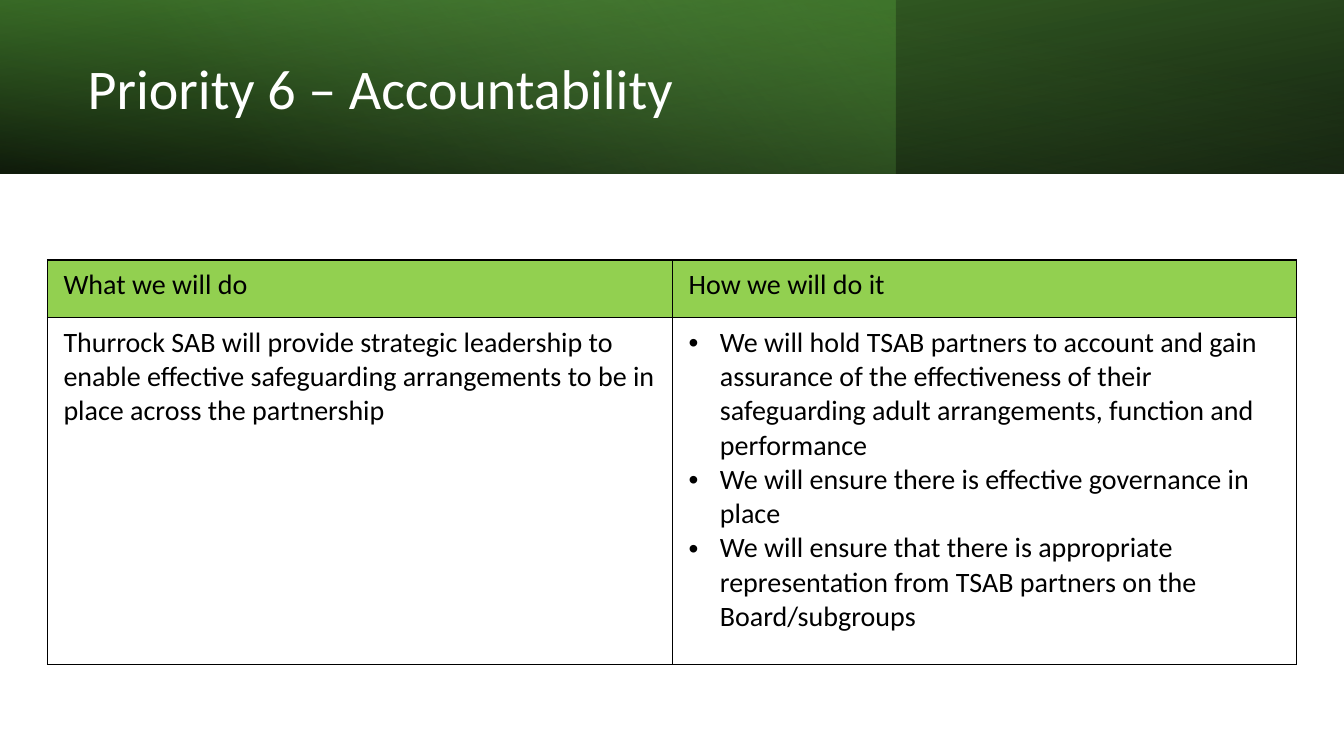
"""Build the Priority 6 accountability slide: a gradient banner over a two-column table."""
from lxml.etree import SubElement
from pptx import Presentation
from pptx.dml.color import RGBColor
from pptx.enum.shapes import MSO_SHAPE
from pptx.enum.text import MSO_ANCHOR, PP_ALIGN
from pptx.oxml.ns import qn
from pptx.util import Inches, Pt

TITLE = "Priority 6 – Accountability"
HEADINGS = ["What we will do", "How we will do it"]
AIM = ["Thurrock SAB will provide strategic leadership to enable effective safeguarding "
       "arrangements to be in place across the partnership"]
ACTIONS = [
    "We will hold TSAB partners to account and gain assurance of the effectiveness of their "
    "safeguarding adult arrangements, function and performance",
    "We will ensure there is effective governance in place",
    "We will ensure that there is appropriate representation from TSAB partners on the "
    "Board/subgroups",
]
COLORS = {"black": "000000", "white": "FFFFFF", "forest": "3F762B", "green": "549E39",
          "pale": "93D07D", "heading": "92D050"}
FONT = "Calibri"
WIDTH, HEIGHT, BANNER_HEIGHT = 13.33, 7.5, 1.72
BANNER = [
    {"share": 1, "angle": 100, "rotation": 180, "flip": True,
     "stops": [(0, "black", 96), (100, "forest", 100)]},
    {"share": 2 / 3, "angle": 140, "rotation": 0, "flip": False,
     "stops": [(0, "green", 41), (74, "pale", 0)]},
    {"share": 1, "angle": 260, "rotation": 0, "flip": True,
     "stops": [(0, "black", 63), (78, "green", 15)]},
]
TITLE_BOX = (0.77, 0.27, 7.72, 1.27)
TABLE_BOX = (0.47, 2.58, 12.39, 4.01)
COLUMN_WIDTHS = [6.2, 6.19]
ROW_HEIGHTS = [0.57, 3.44]
INDENT = 0.31


def write_text(frame, lines, size=20, color="black", bullet=None, spacing=None):
    """Fill a text frame with one paragraph per line."""
    for index, line in enumerate(lines):
        para = frame.paragraphs[0] if index == 0 else frame.add_paragraph()
        para.alignment = PP_ALIGN.LEFT
        if spacing:
            para.line_spacing = spacing
        if bullet:
            properties = para._p.get_or_add_pPr()
            properties.set("marL", str(Inches(INDENT)))
            properties.set("indent", str(-Inches(INDENT)))
            SubElement(properties, qn("a:buFont"), typeface="Arial")
            SubElement(properties, qn("a:buChar"), char=bullet)
        span = para.add_run()
        span.text = line
        span.font.size = Pt(size)
        span.font.name = FONT
        span.font.color.rgb = RGBColor.from_string(COLORS[color])


def add_banner_layer(page, share, angle, rotation, flip, stops):
    """Add one gradient rectangle across a share of the slide's width."""
    layer = page.shapes.add_shape(MSO_SHAPE.RECTANGLE, 0, 0, Inches(WIDTH * share),
                                  Inches(BANNER_HEIGHT))
    layer.shadow.inherit = False
    layer.line.fill.background()
    layer.rotation = rotation
    if flip:
        layer._element.spPr.find(qn("a:xfrm")).set("flipH", "1")
    layer.fill.gradient()
    gradient = layer._element.spPr.find(qn("a:gradFill"))
    gradient.set("rotWithShape", "1")
    for child in list(gradient):
        gradient.remove(child)
    stop_list = SubElement(gradient, qn("a:gsLst"))
    for position, color, opacity in stops:
        stop = SubElement(stop_list, qn("a:gs"), pos=str(position * 1000))
        tint = SubElement(stop, qn("a:srgbClr"), val=COLORS[color])
        SubElement(tint, qn("a:alpha"), val=str(opacity * 1000))
    SubElement(gradient, qn("a:lin"), ang=str(angle * 60000), scaled="0")


def format_cell(cell, fill=None):
    """Set a cell's margins, borders and fill."""
    cell.margin_left = cell.margin_right = Inches(0.16)
    cell.margin_top = cell.margin_bottom = Inches(0.08)
    properties = cell._tc.get_or_add_tcPr()
    for side in ("lnL", "lnR", "lnT", "lnB"):
        border = SubElement(properties, qn(f"a:{side}"), w=str(Pt(1)))
        SubElement(SubElement(border, qn("a:solidFill")), qn("a:srgbClr"), val=COLORS["black"])
    if fill:
        cell.fill.solid()
        cell.fill.fore_color.rgb = RGBColor.from_string(COLORS[fill])
    else:
        cell.fill.background()


def add_priority_table(page):
    """Add the table of aims and actions."""
    table = page.shapes.add_table(2, 2, *map(Inches, TABLE_BOX)).table
    table.first_row = True
    table.horz_banding = False
    for column, width in zip(table.columns, COLUMN_WIDTHS):
        column.width = Inches(width)
    for row, height in zip(table.rows, ROW_HEIGHTS):
        row.height = Inches(height)
    for index, heading in enumerate(HEADINGS):
        write_text(table.cell(0, index).text_frame, [heading])
        format_cell(table.cell(0, index), fill="heading")
    for index, (lines, bullet) in enumerate([(AIM, None), (ACTIONS, "•")]):
        write_text(table.cell(1, index).text_frame, lines, bullet=bullet)
        format_cell(table.cell(1, index))


def main():
    """Assemble and save the deck."""
    deck = Presentation()
    deck.slide_width, deck.slide_height = Inches(WIDTH), Inches(HEIGHT)
    page = deck.slides.add_slide(deck.slide_layouts[5])
    for layer in BANNER:
        add_banner_layer(page, **layer)
    title = page.shapes.title
    title.left, title.top, title.width, title.height = map(Inches, TITLE_BOX)
    title.text_frame.vertical_anchor = MSO_ANCHOR.MIDDLE
    title.text_frame.word_wrap = True
    write_text(title.text_frame, [TITLE], size=40, color="white", spacing=0.9)
    page.shapes._spTree.append(title._element)
    add_priority_table(page)
    deck.save("out.pptx")


if __name__ == "__main__":
    main()
